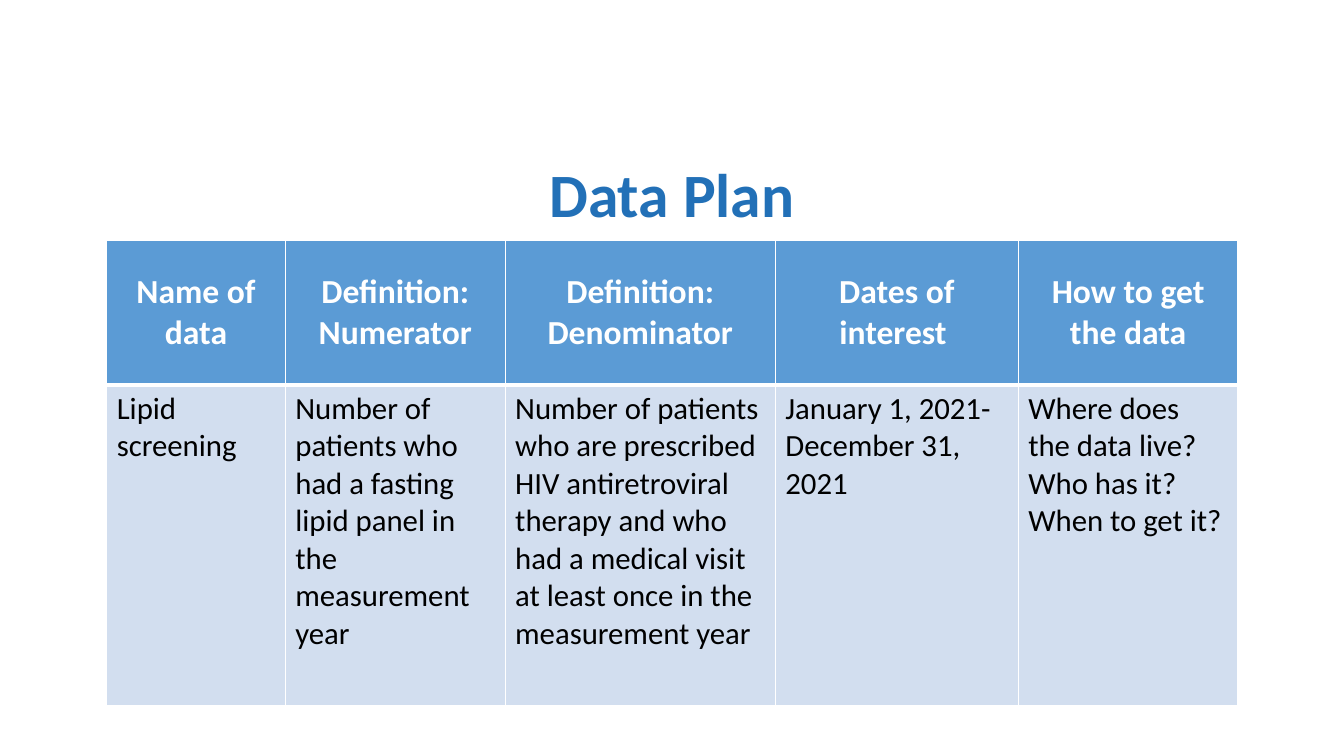
from lxml.etree import SubElement
from pptx import Presentation
from pptx.dml.color import RGBColor
from pptx.enum.text import MSO_ANCHOR as Anchor, PP_ALIGN as Align
from pptx.oxml.ns import qn
from pptx.util import Cm, Pt


def colour(hex_code):
    return RGBColor.from_string(hex_code)


class DataSlide:
    font = "Calibri"
    title_blue = "2270B7"
    header_blue = "5B9BD5"
    body_blue = "D2DEEF"
    white = "FFFFFF"
    black = "000000"

    def __init__(self, deck):
        self.slide = deck.slides.add_slide(deck.slide_layouts[5])

    def add_lines(self, frame, lines, size, hex_code, bold, align):
        for index, line in enumerate(lines):
            paragraph = frame.add_paragraph() if index else frame.paragraphs[0]
            paragraph.alignment = align
            run = paragraph.add_run()
            run.text = line
            run.font.name = self.font
            run.font.size = Pt(size)
            run.font.bold = bold
            run.font.color.rgb = colour(hex_code)

    def title(self, text, left, top, width, height):
        heading = self.slide.shapes.title
        heading.left, heading.top = Cm(left), Cm(top)
        heading.width, heading.height = Cm(width), Cm(height)
        frame = heading.text_frame
        frame.word_wrap = True
        frame.vertical_anchor = Anchor.MIDDLE
        self.add_lines(frame, [text], 44, self.title_blue, True, Align.CENTER)
        frame.paragraphs[0].line_spacing = 0.9

    def borders(self, cell, top, bottom):
        properties = cell._tc.get_or_add_tcPr()
        for side, points in (("L", 1), ("R", 1), ("T", top), ("B", bottom)):
            line = SubElement(properties, qn(f"a:ln{side}"), w=str(Pt(points)))
            fill = SubElement(line, qn("a:solidFill"))
            SubElement(fill, qn("a:srgbClr"), val=self.white)

    def table(self, rows, left, top, widths, heights):
        grid = self.slide.shapes.add_table(
            len(rows), len(widths), Cm(left), Cm(top),
            Cm(sum(widths)), Cm(sum(heights))).table
        for column, width in zip(grid.columns, widths):
            column.width = Cm(width)
        for row, height in zip(grid.rows, heights):
            row.height = Cm(height)
        for row_index, row in enumerate(rows):
            for column_index, lines in enumerate(row):
                cell = grid.cell(row_index, column_index)
                if row_index == 0:
                    self.header_cell(cell, lines)
                else:
                    self.body_cell(cell, lines)

    def header_cell(self, cell, lines):
        self.borders(cell, 1, 3)
        cell.fill.solid()
        cell.fill.fore_color.rgb = colour(self.header_blue)
        cell.vertical_anchor = Anchor.MIDDLE
        self.add_lines(cell.text_frame, lines, 24, self.white, True, Align.CENTER)

    def body_cell(self, cell, lines):
        self.borders(cell, 3, 1)
        cell.fill.solid()
        cell.fill.fore_color.rgb = colour(self.body_blue)
        cell.vertical_anchor = Anchor.TOP
        self.add_lines(cell.text_frame, lines, 22, self.black, False, Align.LEFT)


def main():
    deck = Presentation()
    deck.slide_width, deck.slide_height = Cm(33.87), Cm(19.05)
    plan = DataSlide(deck)
    plan.title("Data Plan", 2.33, 3.94, 29.21, 2.1)
    headings = [
        ["Name of data"],
        ["Definition:", "Numerator"],
        ["Definition:", "Denominator"],
        ["Dates of interest "],
        ["How to get the data"],
    ]
    lipid_screening = [
        ["Lipid screening"],
        ["Number of patients who had a fasting lipid panel in the "
         "measurement year"],
        ["Number of patients who are prescribed HIV antiretroviral therapy "
         "and who had a medical visit at least once in the measurement year"],
        ["January 1, 2021-December 31, 2021"],
        ["Where does the data live?", "Who has it?", "When to get it?"],
    ]
    plan.table([headings, lipid_screening], 2.69, 6.07,
               [4.5, 5.54, 6.81, 6.12, 5.54], [3.63, 8.08])
    deck.save("out.pptx")


if __name__ == "__main__":
    main()
